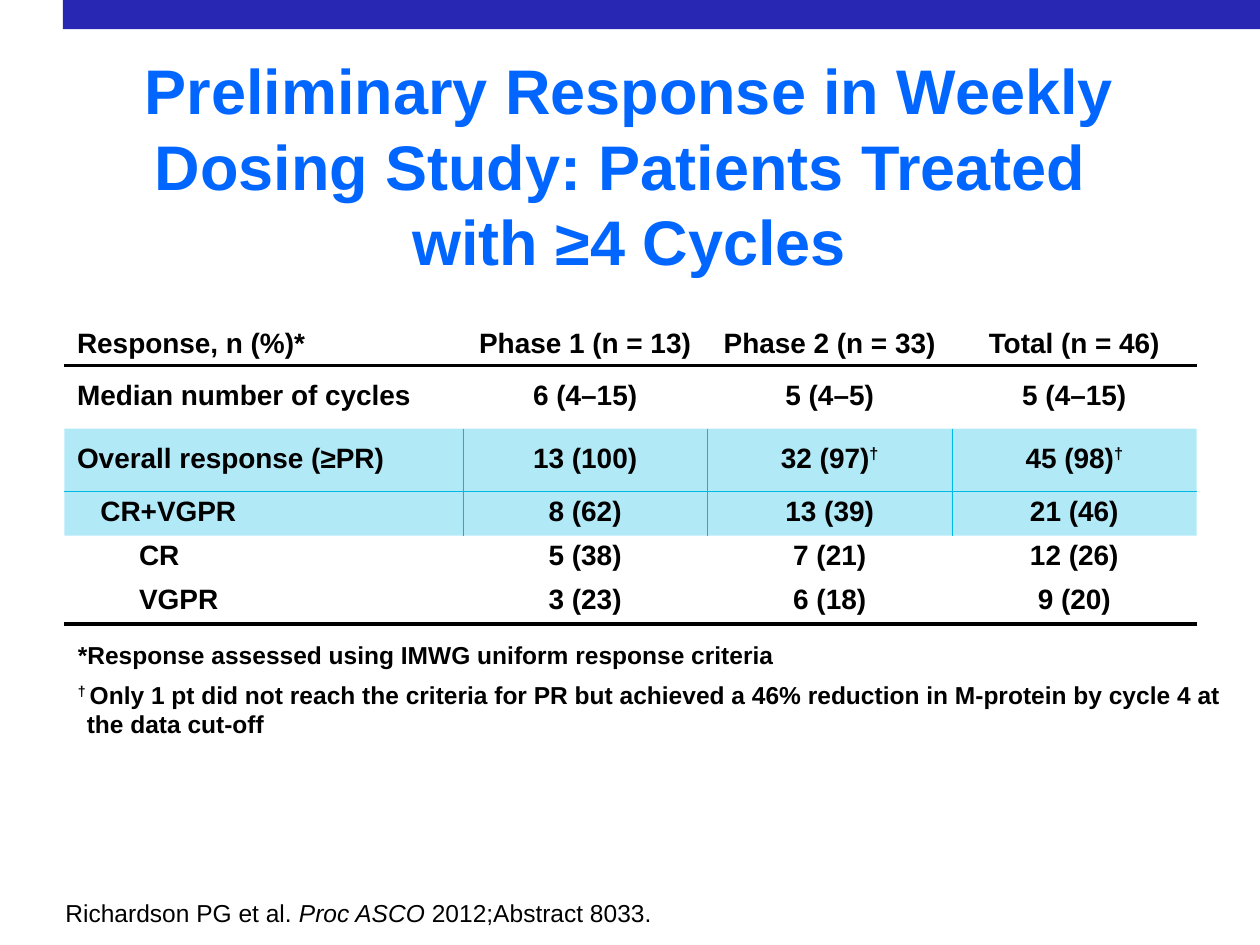
from lxml import etree
from pptx import Presentation
from pptx.dml.color import RGBColor
from pptx.enum.shapes import MSO_SHAPE
from pptx.enum.text import MSO_ANCHOR, PP_ALIGN
from pptx.oxml.ns import qn
from pptx.util import Cm, Pt

CENTER, LEFT = PP_ALIGN.CENTER, PP_ALIGN.LEFT
MIDDLE, BOTTOM, TOP = MSO_ANCHOR.MIDDLE, MSO_ANCHOR.BOTTOM, MSO_ANCHOR.TOP

FONT = "Arial"
BLACK, BAR_BLUE, TITLE_BLUE, CYAN = "000000", "2727B3", "0066FF", "00B9E7"

# Each text is a list of (words, style) runs; style is "", "sup" or "italic".
TITLE = [("Preliminary Response in Weekly Dosing Study: Patients Treated \vwith ≥4 Cycles", "")]
DAGGER = ("†", "sup")
FOOTNOTES = [
    [("*Response assessed using IMWG uniform response criteria", "")],
    [("† ", "sup"),
     ("Only 1 pt did not reach the criteria for PR but achieved a 46% reduction "
      "in M-protein by cycle 4 at the data cut-off", "")],
]
CITATION = [("Richardson PG et al. ", ""), ("Proc ASCO ", "italic"), ("2012;Abstract 8033.", "")]

# Row height (cm), label indent (cm), cells
RESPONSES = [
    (1.27, 0, ["Response, n (%)*", "Phase 1 (n = 13)", "Phase 2 (n = 33)", "Total (n = 46)"]),
    (1.27, 0, ["Median number of cycles", "6 (4–15)", "5 (4–5)", "5 (4–15)"]),
    (1.27, 0, ["Overall response (≥PR)", "13 (100)", "32 (97)†", "45 (98)†"]),
    (0.89, 0.47, ["CR+VGPR", "8 (62)", "13 (39)", "21 (46)"]),
    (0.89, 1.25, ["CR", "5 (38)", "7 (21)", "12 (26)"]),
    (0.89, 1.25, ["VGPR", "3 (23)", "6 (18)", "9 (20)"]),
]
COLUMN_WIDTHS = [8.03, 4.93, 4.93, 4.93]
HIGHLIGHTED = (2, 3)
RULE, HAIRLINE = (BLACK, 2.25), (CYAN, 0.25)
# Rules by the number of rows above them
HORIZONTAL_RULES = {1: RULE, 3: HAIRLINE, len(RESPONSES): RULE}


def rgb(color):
    return RGBColor.from_string(color)


def write_runs(paragraph, runs, size, color=BLACK, bold=False):
    paragraph.text = ""
    for words, style in runs:
        for part, line in enumerate(words.split("\v")):
            if part:
                paragraph.add_line_break()
            run = paragraph.add_run()
            run.text = line
            font = run.font
            font.name, font.size, font.bold = FONT, Pt(size), bold
            font.color.rgb = rgb(color)
            if style == "italic":
                font.italic = True
            if style == "sup":
                run._r.get_or_add_rPr().set("baseline", "30000")


def indent(paragraph, left, first=0):
    properties = paragraph._p.get_or_add_pPr()
    properties.set("marL", str(Cm(left)))
    properties.set("indent", str(Cm(first)))


def add_text(slide, left, top, width, height, anchor):
    frame = slide.shapes.add_textbox(Cm(left), Cm(top), Cm(width), Cm(height)).text_frame
    frame.word_wrap = True
    frame.vertical_anchor = anchor
    return frame


def set_borders(cell, borders):
    """Take (color, points) or None for left, right, top and bottom."""
    properties = cell._tc.get_or_add_tcPr()
    for place, (side, border) in enumerate(zip("LRTB", borders)):
        line = etree.Element(qn(f"a:ln{side}"))
        if border:
            color, points = border
            line.set("w", str(Pt(points)))
            fill = etree.SubElement(line, qn("a:solidFill"))
            etree.SubElement(fill, qn("a:srgbClr"), val=color)
        else:
            etree.SubElement(line, qn("a:noFill"))
        properties.insert(place, line)


def fill_cell(cell, highlighted):
    if not highlighted:
        cell.fill.background()
        return
    cell.fill.solid()
    cell.fill.fore_color.rgb = rgb(CYAN)
    tint = cell._tc.tcPr.find(f".//{qn('a:srgbClr')}")
    etree.SubElement(tint, qn("a:alpha"), val="30000")


def add_response_table(slide):
    heights = [height for height, _, _ in RESPONSES]
    table = slide.shapes.add_table(
        len(RESPONSES), len(COLUMN_WIDTHS), Cm(1.3), Cm(6.1),
        Cm(sum(COLUMN_WIDTHS)), Cm(sum(heights))).table
    table.first_row = table.horz_banding = False
    for column, width in zip(table.columns, COLUMN_WIDTHS):
        column.width = Cm(width)
    last = len(COLUMN_WIDTHS) - 1
    for r, (height, label_indent, values) in enumerate(RESPONSES):
        table.rows[r].height = Cm(height)
        highlighted = r in HIGHLIGHTED
        divider = HAIRLINE if highlighted else None
        for c, value in enumerate(values):
            cell = table.cell(r, c)
            cell.vertical_anchor = MIDDLE if r else BOTTOM
            paragraph = cell.text_frame.paragraphs[0]
            words = value.rstrip("†")
            write_runs(paragraph, [(words, "")] + [DAGGER] * (words != value), 16, bold=True)
            paragraph.line_spacing = 0.85
            paragraph.alignment = CENTER if c else LEFT
            if c == 0:
                indent(paragraph, label_indent)
            fill_cell(cell, highlighted)
            set_borders(cell, [divider if c else None, divider if c < last else None,
                               HORIZONTAL_RULES.get(r), HORIZONTAL_RULES.get(r + 1)])


def main():
    deck = Presentation()
    deck.slide_width, deck.slide_height = Cm(25.4), Cm(19.05)
    slide = deck.slides.add_slide(deck.slide_layouts[6])

    bar = slide.shapes.add_shape(MSO_SHAPE.RECTANGLE, Cm(1.27), 0, Cm(24.13), Cm(0.59))
    bar.shadow.inherit = False
    bar.fill.solid()
    bar.fill.fore_color.rgb = rgb(BAR_BLUE)
    bar.line.fill.background()

    title = add_text(slide, 1.27, 2.87, 22.83, 2.84, BOTTOM)
    title.margin_left = title.margin_right = title.margin_top = title.margin_bottom = Cm(0.1)
    write_runs(title.paragraphs[0], TITLE, 36, TITLE_BLUE, bold=True)
    title.paragraphs[0].alignment = CENTER

    add_response_table(slide)

    notes = add_text(slide, 1.32, 12.75, 24.08, 2.26, BOTTOM)
    for number, note in enumerate(FOOTNOTES):
        paragraph = notes.add_paragraph() if number else notes.paragraphs[0]
        write_runs(paragraph, note, 14, bold=True)
        if number:
            paragraph.space_before = Pt(6)
            indent(paragraph, 0.18, -0.18)

    citation = add_text(slide, 1.07, 17.98, 14.17, 0.86, TOP)
    write_runs(citation.paragraphs[0], CITATION, 14)

    deck.save("out.pptx")


if __name__ == "__main__":
    main()
